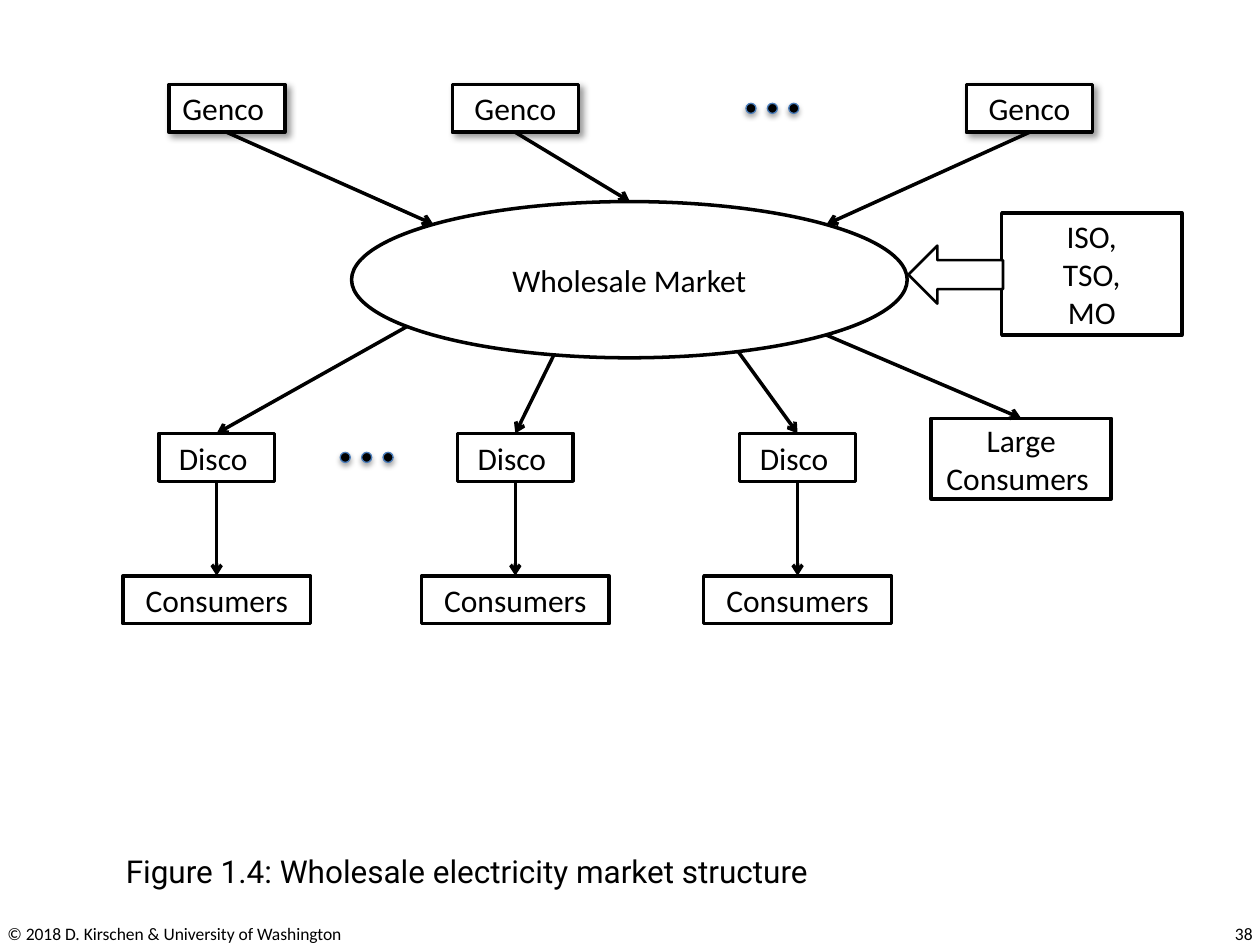
from lxml.etree import SubElement
from pptx import Presentation
from pptx.dml.color import RGBColor
from pptx.enum.shapes import MSO_CONNECTOR, MSO_SHAPE
from pptx.enum.text import MSO_ANCHOR, PP_ALIGN
from pptx.oxml.ns import qn
from pptx.util import Inches, Pt

INK, PAPER, RIM = "000000", "FFFFFF", "4B7EBC"
SIZE = 10, 7.5
ROW = {"genco": 0.67, "disco": 3.44, "consumer": 4.57}
HIGH = 0.38
GENCOS = [(1.8, 0.92, "Genco "), (4.09, 1, "Genco"), (8.17, 1, "Genco")]
ENTRIES = [(3.44, 1.78), (5, 1.6), (6.56, 1.78)]
DISCOS = [1.72, 4.09, 6.33]
MARKET = (2.79, 1.6, 4.41, 1.24)
LARGE = (7.39, 3.32, 1.43, 0.64)
ADMIN = (7.95, 1.69, 1.43, 0.97)
ARROW = (7.21, 1.95, 0.75, 0.46)
DOTS = [(2.7, 3.59), (5.92, 0.82)]
DOT, STEP = 0.08, 0.17
BOX_SHADE = (40, 4, 3, 45)
DOT_SHADE = (35, 3.1, 1.8, 90)
TEXTS = [
    ((0.9, 6.71, 5.67, 0.4), "Figure 1.4: Wholesale electricity market structure",
     18, "Roboto", PP_ALIGN.LEFT, MSO_ANCHOR.TOP),
    ((-0.04, 7.21, 2.94, 0.4), "© 2018 D. Kirschen & University of Washington",
     10, "Calibri", PP_ALIGN.LEFT, MSO_ANCHOR.MIDDLE),
    ((7.71, 7.21, 2.33, 0.4), "38", 10, "Calibri", PP_ALIGN.RIGHT, MSO_ANCHOR.MIDDLE),
]


def color(code):
    """Turn a hex string into a colour."""
    return RGBColor.from_string(code)


def write(frame, lines, size=18, face="Calibri", align=PP_ALIGN.CENTER,
          anchor=MSO_ANCHOR.MIDDLE):
    """Write one paragraph per line into a text frame."""
    frame.word_wrap = True
    frame.vertical_anchor = anchor
    for i, line in enumerate(lines):
        para = frame.add_paragraph() if i else frame.paragraphs[0]
        para.alignment = align
        run = para.add_run()
        run.text = line
        run.font.size, run.font.name = Pt(size), face
        run.font.color.rgb = color(INK)


def shade(shape, alpha, blur, dist, angle):
    """Give a shape an outer shadow."""
    effects = shape._element.spPr.find(qn("a:effectLst"))
    outer = SubElement(effects, qn("a:outerShdw"), blurRad=str(Pt(blur)),
                       dist=str(Pt(dist)), dir=str(angle * 60000), rotWithShape="0")
    tint = SubElement(outer, qn("a:srgbClr"), val=INK)
    SubElement(tint, qn("a:alpha"), val=str(alpha * 1000))


def draw(slide, kind, at, lines=(), fill=PAPER, edge=INK, width=2, shadow=None):
    """Add a filled, outlined shape with optional text and shadow."""
    shape = slide.shapes.add_shape(kind, *map(Inches, at))
    shape.fill.solid()
    shape.fill.fore_color.rgb = color(fill)
    shape.line.color.rgb = color(edge)
    shape.line.width = Pt(width)
    shape.shadow.inherit = False
    if shadow:
        shade(shape, *shadow)
    if lines:
        write(shape.text_frame, lines)


def box(slide, mid, top, width, text, shadow=None):
    """Add a one-line box centred on a column."""
    draw(slide, MSO_SHAPE.RECTANGLE, (mid - width / 2, top, width, HIGH), [text],
         shadow=shadow)


def link(slide, start, end):
    """Add a straight arrow between two points."""
    line = slide.shapes.add_connector(MSO_CONNECTOR.STRAIGHT, *map(Inches, start + end))
    line.line.color.rgb = color(INK)
    line.line.width = Pt(2)
    props = line._element.spPr
    SubElement(props.find(qn("a:ln")), qn("a:tailEnd"), type="arrow")
    SubElement(props, qn("a:effectLst"))


def main():
    """Build the market structure slide."""
    deck = Presentation()
    deck.slide_width, deck.slide_height = map(Inches, SIZE)
    slide = deck.slides.add_slide(deck.slide_layouts[6])

    hub = (MARKET[0] + MARKET[2] / 2, MARKET[1])
    for mid in DISCOS:
        link(slide, hub, (mid, ROW["disco"]))
        link(slide, (mid, ROW["disco"] + HIGH), (mid, ROW["consumer"]))
        box(slide, mid, ROW["disco"], 0.92, "Disco ")
        box(slide, mid, ROW["consumer"], 1.49, "Consumers")
    draw(slide, MSO_SHAPE.OVAL, MARKET, ["Wholesale Market"])

    for (mid, width, text), entry in zip(GENCOS, ENTRIES):
        box(slide, mid, ROW["genco"], width, text, BOX_SHADE)
        link(slide, (mid, ROW["genco"] + HIGH), entry)
    for left, top in DOTS:
        for i in range(3):
            draw(slide, MSO_SHAPE.OVAL, (left + i * STEP, top, DOT, DOT), fill=INK,
                 edge=RIM, width=0.75, shadow=DOT_SHADE)

    draw(slide, MSO_SHAPE.RECTANGLE, LARGE, ["Large", "Consumers "])
    link(slide, (6.56, 2.66), (LARGE[0] + LARGE[2] / 2, LARGE[1]))
    draw(slide, MSO_SHAPE.RECTANGLE, ADMIN, ["ISO,", "TSO,", "MO"])
    draw(slide, MSO_SHAPE.LEFT_ARROW, ARROW, width=1.5)

    for at, text, *style in TEXTS:
        area = slide.shapes.add_textbox(*map(Inches, at))
        write(area.text_frame, [text], *style)
    deck.save("out.pptx")


if __name__ == "__main__":
    main()
